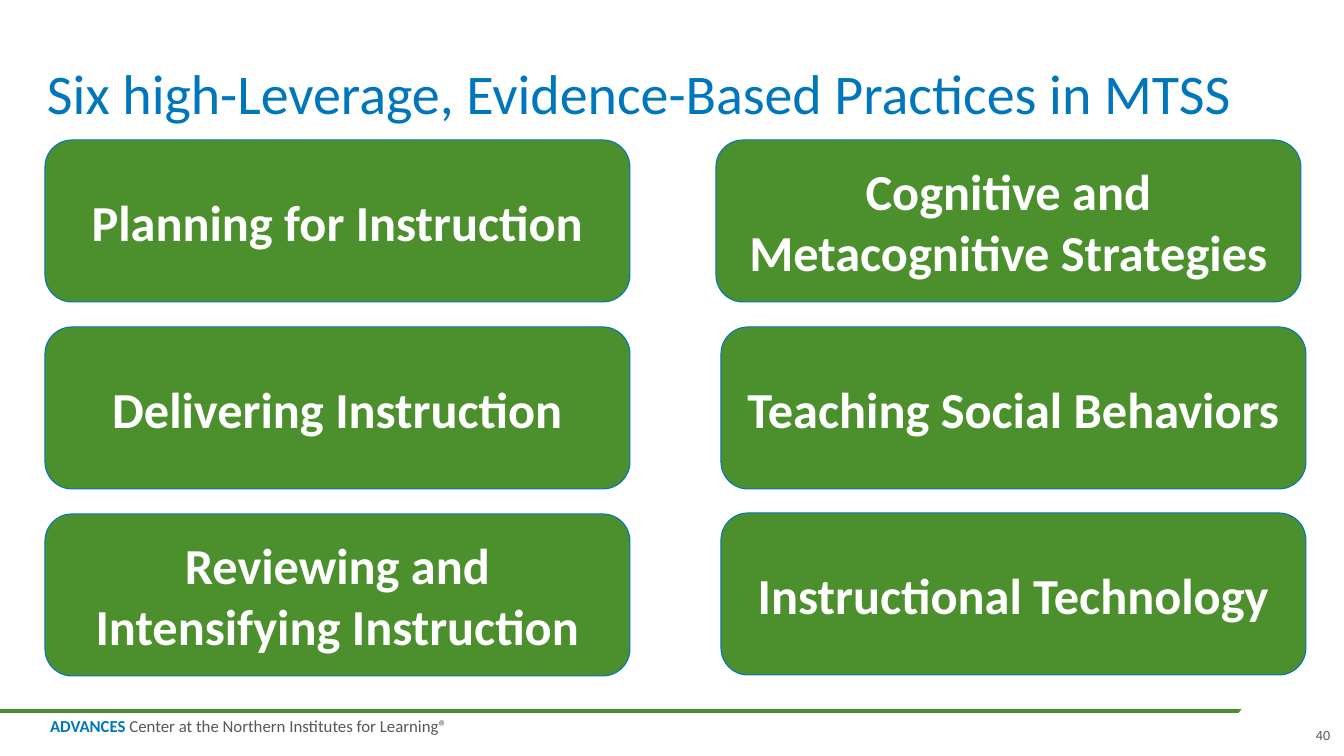
from pptx import Presentation
from pptx.dml.color import RGBColor
from pptx.enum.shapes import MSO_CONNECTOR, MSO_SHAPE
from pptx.enum.text import MSO_ANCHOR, PP_ALIGN
from pptx.oxml.ns import qn
from pptx.util import Pt

ROUND, OVAL = MSO_SHAPE.ROUNDED_RECTANGLE, MSO_SHAPE.OVAL
LINE = MSO_CONNECTOR.STRAIGHT
TOP, MIDDLE, BOTTOM = MSO_ANCHOR.TOP, MSO_ANCHOR.MIDDLE, MSO_ANCHOR.BOTTOM
LEFT, CENTER = PP_ALIGN.LEFT, PP_ALIGN.CENTER

TITLE = "Six high-Leverage, Evidence-Based Practices in MTSS"
LEFT_COL = [
    ("Planning for Instruction", 45, 140),
    ("Delivering Instruction", 45, 327),
    ("Reviewing and Intensifying Instruction", 45, 514),
]
RIGHT_COL = [
    ("Cognitive and Metacognitive Strategies", 716, 140),
    ("Teaching Social Behaviors", 721, 327),
    ("Instructional Technology", 721, 513),
]
CENTER_NAME = "ADVANCES"
CENTER_HOST = " Center at the Northern Institutes for Learning®"
NUMBER = "40"

GREEN, BLUE, GRAY, WHITE = "4C902D", "0076BD", "59565A", "FFFFFF"
FONT = "Calibri"
CARD_W, CARD_H = 585, 162
SCALE = 9071


def px(n):
    return n * SCALE


def color(code):
    return RGBColor.from_string(code)


def write(shape, runs, size, pad=(0, 0), anchor=TOP, align=LEFT, bold=False, wrap=True, space=1.0):
    frame = shape.text_frame
    frame.word_wrap = wrap
    frame.vertical_anchor = anchor
    frame.margin_left = frame.margin_right = px(pad[0])
    frame.margin_top = frame.margin_bottom = px(pad[1])
    para = frame.paragraphs[0]
    para.alignment = align
    para.line_spacing = space
    para.font.name = FONT
    para.font.size = Pt(size)
    para.font.bold = bold
    for text, code in runs:
        run = para.add_run()
        run.text = text
        run.font.color.rgb = color(code)
    return para


def shape(kind, x, y, w, h, fill):
    item = slide.shapes.add_shape(kind, px(x), px(y), px(w), px(h))
    item.shadow.inherit = False
    item.fill.solid()
    item.fill.fore_color.rgb = color(fill)
    return item


def box(x, y, w, h):
    return slide.shapes.add_textbox(px(x), px(y), px(w), px(h))


deck = Presentation()
deck.slide_width, deck.slide_height = px(1344), px(756)
slide = deck.slides.add_slide(deck.slide_layouts[6])

rule = slide.shapes.add_connector(LINE, 0, px(711), px(1310), px(711))
rule.line.color.rgb = color(GREEN)
rule.line.width = Pt(3)
props = rule._element.spPr
props.append(props.makeelement(qn("a:effectLst"), {}))

foot = write(box(50, 719, 405, 17), [(CENTER_NAME, BLUE), (CENTER_HOST, GRAY)],
             12, wrap=False, space=0.85)
foot.runs[0].font.bold = True

mask = shape(OVAL, 1226, 682, 120, 58, WHITE)
mask.line.fill.background()
mask.rotation = 332.1

write(box(47, 5, 1250, 122), [(TITLE, BLUE)], 40, anchor=BOTTOM, space=0.9)

for label, x, y in LEFT_COL + RIGHT_COL:
    card = shape(ROUND, x, y, CARD_W, CARD_H, GREEN)
    card.line.color.rgb = color(BLUE)
    card.line.width = Pt(0.75)
    write(card, [(label, WHITE)], 36, pad=(13, 13), anchor=MIDDLE, align=CENTER, bold=True)

write(box(1309, 723, 35, 30), [(NUMBER, GRAY)], 10, pad=(7, 4), wrap=False)

deck.save("out.pptx")
